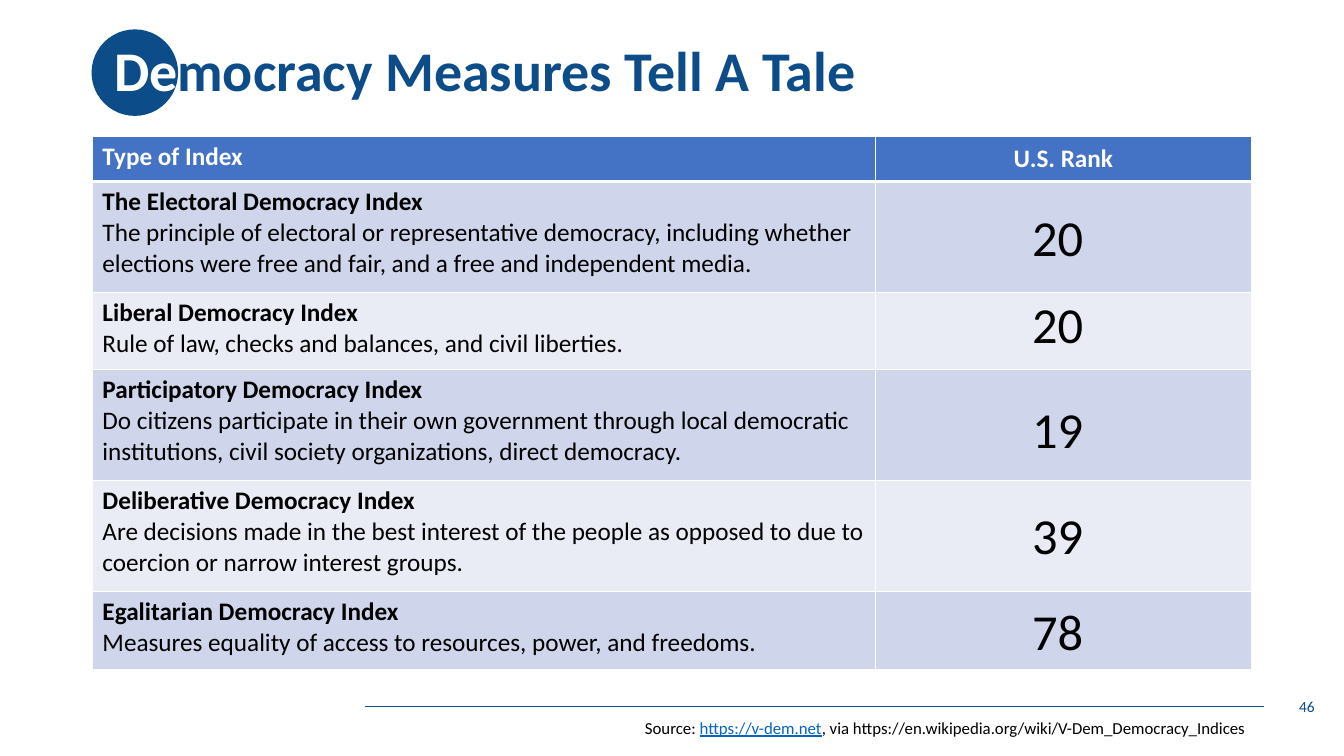
from dataclasses import dataclass

from lxml import etree
from pptx import Presentation
from pptx import util as u
from pptx.dml.color import RGBColor
from pptx.enum import shapes, text
from pptx.oxml import ns

COLS, ROWS = 160, 90
LEFT, MID, RIGHT = text.PP_ALIGN.LEFT, text.PP_ALIGN.CENTER, text.PP_ALIGN.RIGHT


@dataclass(frozen=True)
class Theme:
    font: str = "Calibri"
    navy: str = "0C4C88"
    head: str = "4472C4"
    bands: tuple = ("CFD5EA", "E9EBF5")
    link: str = "0563C1"
    white: str = "FFFFFF"
    black: str = "000000"
    title: int = 40
    rank: int = 36
    body: int = 18
    note: int = 12
    page: int = 11


def rgb(code):
    return RGBColor.from_string(code)


def write(frame, paras, size, color, bold=False, align=LEFT, space=None):
    """Fill a frame; each paragraph is a list of (words, format changes)."""
    for i, runs in enumerate(paras):
        para = frame.paragraphs[0] if i == 0 else frame.add_paragraph()
        para.alignment = align
        para.line_spacing = space
        for words, style in runs:
            run = para.add_run()
            run.text = words
            font = run.font
            font.name, font.size = THEME.font, u.Pt(size)
            font.bold = style.get("bold", bold)
            font.underline = style.get("under", False)
            font.color.rgb = rgb(style.get("color", color))


def edge(cell, sides):
    """Draw white cell borders; sides maps L, R, T, B to points."""
    props = cell._tc.get_or_add_tcPr()
    for i, (side, width) in enumerate(sides.items()):
        line = etree.Element(ns.qn("a:ln" + side), w=str(u.Pt(width)))
        fill = etree.SubElement(line, ns.qn("a:solidFill"))
        etree.SubElement(fill, ns.qn("a:srgbClr"), val=THEME.white)
        props.insert(i, line)


class Page:
    """One slide, measured in grid columns and rows."""

    def __init__(self, deck):
        self.slide = deck.slides.add_slide(deck.slide_layouts[6])
        self.items = self.slide.shapes
        self.wide, self.high = deck.slide_width, deck.slide_height

    def x(self, col):
        return u.Emu(round(self.wide * col / COLS))

    def y(self, row):
        return u.Emu(round(self.high * row / ROWS))

    def box(self, col, row, wide, high):
        return self.x(col), self.y(row), self.x(wide), self.y(high)

    def line(self, start, end, row, color):
        rule = self.items.add_connector(
            shapes.MSO_CONNECTOR.STRAIGHT,
            self.x(start), self.y(row), self.x(end), self.y(row))
        rule.line.color.rgb = rgb(color)
        rule.line.width = u.Pt(0.5)
        etree.SubElement(rule._element.spPr, ns.qn("a:effectLst"))

    def disc(self, col, row, size, color):
        disc = self.items.add_shape(
            shapes.MSO_SHAPE.OVAL, *self.box(col, row, size, size))
        disc.shadow.inherit = False
        disc.fill.solid()
        disc.fill.fore_color.rgb = rgb(color)
        disc.line.fill.background()

    def text(self, place, runs, wrap=True, **style):
        """Add a box: wrapped and centred in height, or fitted to its text."""
        frame = self.items.add_textbox(*self.box(*place)).text_frame
        frame.word_wrap = wrap
        if wrap:
            frame.vertical_anchor = text.MSO_ANCHOR.MIDDLE
        else:
            frame.auto_size = text.MSO_AUTO_SIZE.SHAPE_TO_FIT_TEXT
        write(frame, [runs], **style)

    def table(self, col, row, cols, rows, heads, data):
        grid = self.items.add_table(
            len(rows), len(cols),
            *self.box(col, row, sum(cols), sum(rows))).table
        for part, wide in zip(grid.columns, cols):
            part.width = self.x(wide)
        for i, (part, high) in enumerate(zip(grid.rows, rows)):
            part.height = self.y(high)
            for cell in part.cells:
                cell.fill.solid()
                shade = THEME.bands[(i - 1) % 2] if i else THEME.head
                cell.fill.fore_color.rgb = rgb(shade)
                edge(cell, {"L": 1, "R": 1, "T": 3 if i == 1 else 1,
                            "B": 1 if i else 3})
        for j, (head, align) in enumerate(zip(heads, (LEFT, MID))):
            write(grid.cell(0, j).text_frame, [[(head, {})]], THEME.body,
                  THEME.white, bold=True, align=align)
        grid.cell(0, 1).vertical_anchor = text.MSO_ANCHOR.MIDDLE
        for i, (name, about) in enumerate(data, 1):
            write(grid.cell(i, 0).text_frame,
                  [[(name, {"bold": True})], [(about, {})]],
                  THEME.body, THEME.black)


THEME = Theme()
TALL, SHORT = 13.2, 9.24
# name, meaning, row height, U.S. rank, grid row of the rank
INDICES = [
    ("The Electoral Democracy Index",
     "The principle of electoral or representative democracy, including "
     "whether elections were free and fair, and a free and independent media.",
     TALL, "20", 23.9),
    ("Liberal Democracy Index",
     "Rule of law, checks and balances, and civil liberties.",
     SHORT, "20", 34.3),
    ("Participatory Democracy Index",
     "Do citizens participate in their own government through local "
     "democratic institutions, civil society organizations, direct democracy.",
     TALL, "19", 46.8),
    ("Deliberative Democracy Index",
     "Are decisions made in the best interest of the people as opposed to "
     "due to coercion or narrow interest groups.",
     TALL, "39", 59.4),
    ("Egalitarian Democracy Index",
     "Measures equality of access to resources, power, and freedoms.",
     SHORT, "78", 70.8),
]


def main():
    deck = Presentation()
    deck.slide_width, deck.slide_height = u.Inches(13.33), u.Inches(7.5)
    page = Page(deck)

    page.line(43.4, 150.5, 84.1, THEME.navy)
    page.disc(10.9, 3.5, 10.3, THEME.navy)
    page.text((12.4, 0, 138, 17.4),
              [("De", {"color": THEME.white}),
               ("mocracy Measures Tell A Tale", {})],
              size=THEME.title, color=THEME.navy, bold=True, space=0.9)

    page.table(11, 16.2, (93.2, 44.8), [5.4] + [item[2] for item in INDICES],
               ("Type of Index", "U.S. Rank"), [item[:2] for item in INDICES])
    for *_, rank, row in INDICES:
        page.text((121.7, row, 8.5, 8.5), [(rank, {})], wrap=False,
                  size=THEME.rank, color=THEME.black)

    page.text((121.7, 81.7, 36, 4.8), [("46", {})], size=THEME.page,
              color=THEME.navy, align=RIGHT)
    page.text((75.6, 84.8, 74.6, 3.6),
              [("Source: ", {}),
               ("https://v-dem.net", {"color": THEME.link, "under": True}),
               (", via https://en.wikipedia.org/wiki/V-Dem_Democracy_Indices",
                {})],
              wrap=False, size=THEME.note, color=THEME.black)
    deck.save("out.pptx")


if __name__ == "__main__":
    main()
